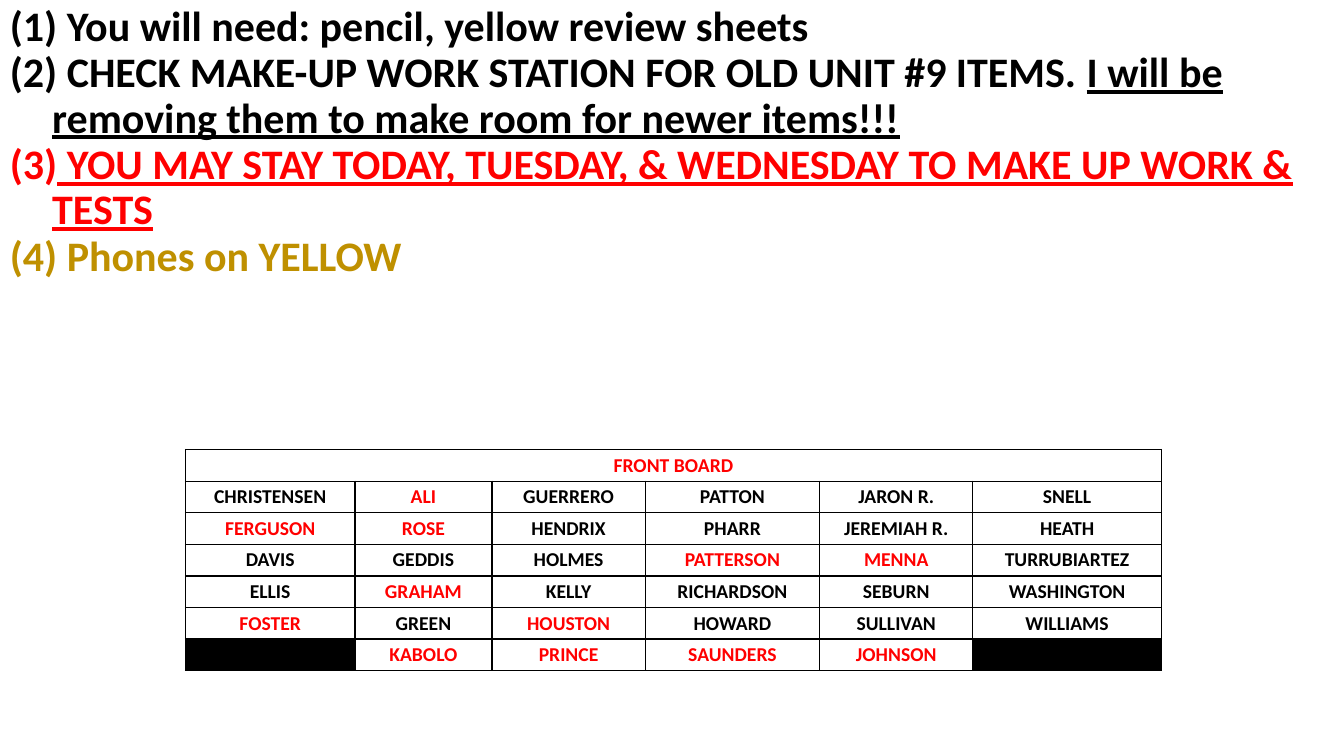
from lxml import etree
from pptx import Presentation
from pptx.dml.color import RGBColor
from pptx.enum.text import PP_ALIGN
from pptx.oxml.ns import qn
from pptx.util import Inches, Pt

CENTER = PP_ALIGN.CENTER
FONT = "Calibri"
BLACK, RED, GOLD = "000000", "FF0000", "BF9000"
SLIDE_WIDTH, SLIDE_HEIGHT = 13.33, 7.5

# Each notice: colour, then (text, underlined) pieces
NOTICES = [
    (BLACK, [(" You will need: pencil, yellow review sheets", False)]),
    (BLACK, [(" CHECK MAKE-UP WORK STATION FOR OLD UNIT #9 ITEMS. ", False),
             ("I will be removing them to make room for newer items!!!", True)]),
    (RED, [(" YOU MAY STAY TODAY, TUESDAY, & WEDNESDAY TO MAKE UP WORK & TESTS", True)]),
    (GOLD, [(" Phones on YELLOW", False)]),
]
NOTICE_HEIGHT = 4.25
NOTICE_INDENT = 0.42

# An empty seat is filled black
SEATS = [
    ["FRONT BOARD", "", "", "", "", ""],
    ["CHRISTENSEN", "ALI", "GUERRERO", "PATTON", "JARON R.", "SNELL"],
    ["FERGUSON", "ROSE", "HENDRIX", "PHARR", "JEREMIAH R.", "HEATH"],
    ["DAVIS", "GEDDIS", "HOLMES", "PATTERSON", "MENNA", "TURRUBIARTEZ"],
    ["ELLIS", "GRAHAM", "KELLY", "RICHARDSON", "SEBURN", "WASHINGTON"],
    ["FOSTER", "GREEN", "HOUSTON", "HOWARD", "SULLIVAN", "WILLIAMS"],
    ["", "KABOLO", "PRINCE", "SAUNDERS", "JOHNSON", ""],
]
RED_SEATS = {"FRONT BOARD", "ALI", "FERGUSON", "ROSE", "PATTERSON", "MENNA", "GRAHAM",
             "FOSTER", "HOUSTON", "KABOLO", "PRINCE", "SAUNDERS", "JOHNSON"}
CHART_LEFT, CHART_TOP = 1.84, 4.46
COLUMN_WIDTHS = [1.68, 1.36, 1.52, 1.73, 1.52, 1.87]
ROW_HEIGHT = 0.31
SEAT_SIZE = 14


def color(hex_string):
    return RGBColor.from_string(hex_string)


def style_font(font, size, hex_string):
    font.name = FONT
    font.size = Pt(size)
    font.bold = True
    font.color.rgb = color(hex_string)


def number_paragraph(paragraph):
    """Give the paragraph a hanging (1), (2), ... number."""
    properties = paragraph._p.get_or_add_pPr()
    properties.set("marL", str(Inches(NOTICE_INDENT)))
    properties.set("indent", str(-Inches(NOTICE_INDENT)))
    etree.SubElement(properties, qn("a:buFont"), typeface="+mj-lt")
    etree.SubElement(properties, qn("a:buAutoNum"), type="arabicParenBoth")


def add_borders(cell):
    properties = cell._tc.get_or_add_tcPr()
    for position, side in enumerate(("a:lnL", "a:lnR", "a:lnT", "a:lnB")):
        line = etree.Element(qn(side), w=str(Pt(1)))
        fill = etree.SubElement(line, qn("a:solidFill"))
        etree.SubElement(fill, qn("a:srgbClr"), val=BLACK)
        properties.insert(position, line)


def add_notices(slide):
    box = slide.shapes.add_textbox(0, 0, Inches(SLIDE_WIDTH), Inches(NOTICE_HEIGHT))
    frame = box.text_frame
    frame.word_wrap = True
    for index, (hex_string, pieces) in enumerate(NOTICES):
        paragraph = frame.add_paragraph() if index else frame.paragraphs[0]
        paragraph.line_spacing = 0.9
        paragraph.space_before = Pt(0.8)
        number_paragraph(paragraph)
        for text, underlined in pieces:
            run = paragraph.add_run()
            run.text = text
            style_font(run.font, 30, hex_string)
            run.font.underline = underlined


def fill_seat(cell, name, blocked):
    cell.margin_left = cell.margin_right = Inches(0.07)
    cell.margin_top = cell.margin_bottom = Inches(0.04)
    paragraph = cell.text_frame.paragraphs[0]
    paragraph.alignment = CENTER
    if name:
        run = paragraph.add_run()
        run.text = name
        style_font(run.font, SEAT_SIZE, RED if name in RED_SEATS else BLACK)
    else:
        etree.SubElement(paragraph._p, qn("a:endParaRPr"), sz=str(SEAT_SIZE * 100))
    if blocked:
        cell.fill.solid()
        cell.fill.fore_color.rgb = color(BLACK)
    else:
        cell.fill.background()
    add_borders(cell)


def add_seating_chart(slide):
    rows, columns = len(SEATS), len(COLUMN_WIDTHS)
    table = slide.shapes.add_table(
        rows, columns, Inches(CHART_LEFT), Inches(CHART_TOP),
        Inches(sum(COLUMN_WIDTHS)), Inches(ROW_HEIGHT * rows)).table
    table.first_row = table.horz_banding = False
    for column, width in zip(table.columns, COLUMN_WIDTHS):
        column.width = Inches(width)
    for row in table.rows:
        row.height = Inches(ROW_HEIGHT)
    for row_index, names in enumerate(SEATS):
        for column_index, name in enumerate(names):
            blocked = row_index > 0 and not name
            fill_seat(table.cell(row_index, column_index), name, blocked)
    table.cell(0, 0).merge(table.cell(0, columns - 1))


def main():
    presentation = Presentation()
    presentation.slide_width = Inches(SLIDE_WIDTH)
    presentation.slide_height = Inches(SLIDE_HEIGHT)
    slide = presentation.slides.add_slide(presentation.slide_layouts[6])
    add_notices(slide)
    add_seating_chart(slide)
    presentation.save("out.pptx")


if __name__ == "__main__":
    main()
